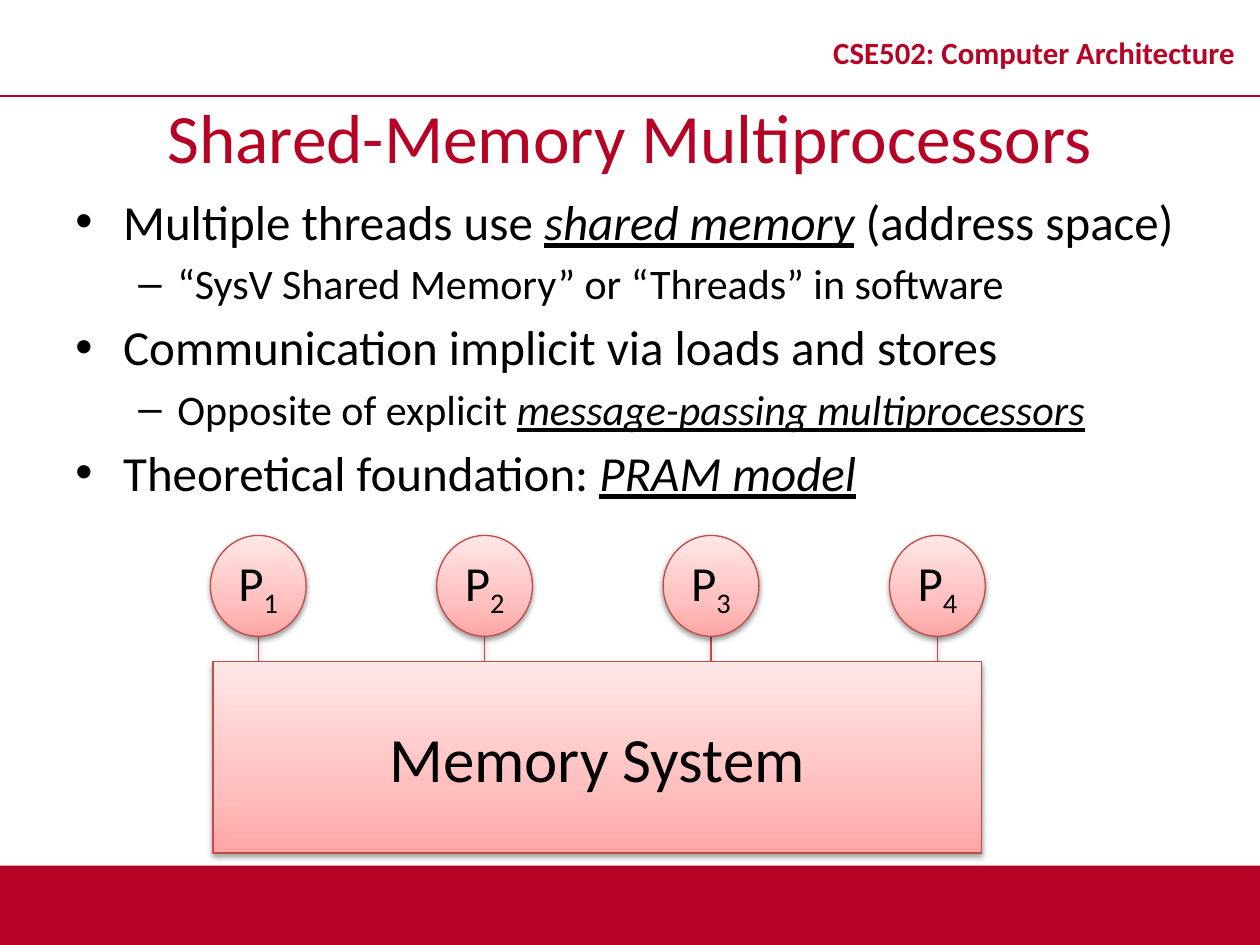
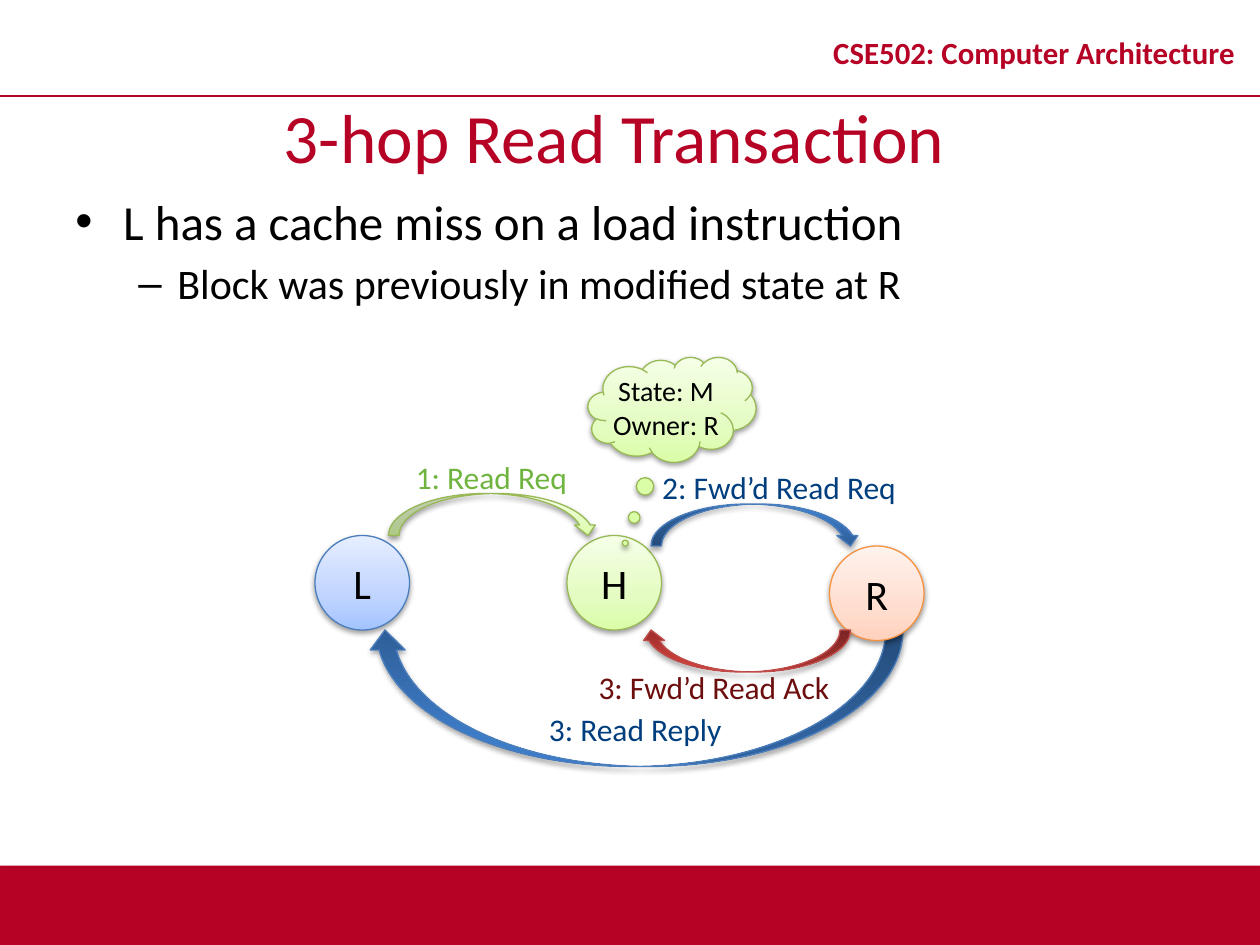
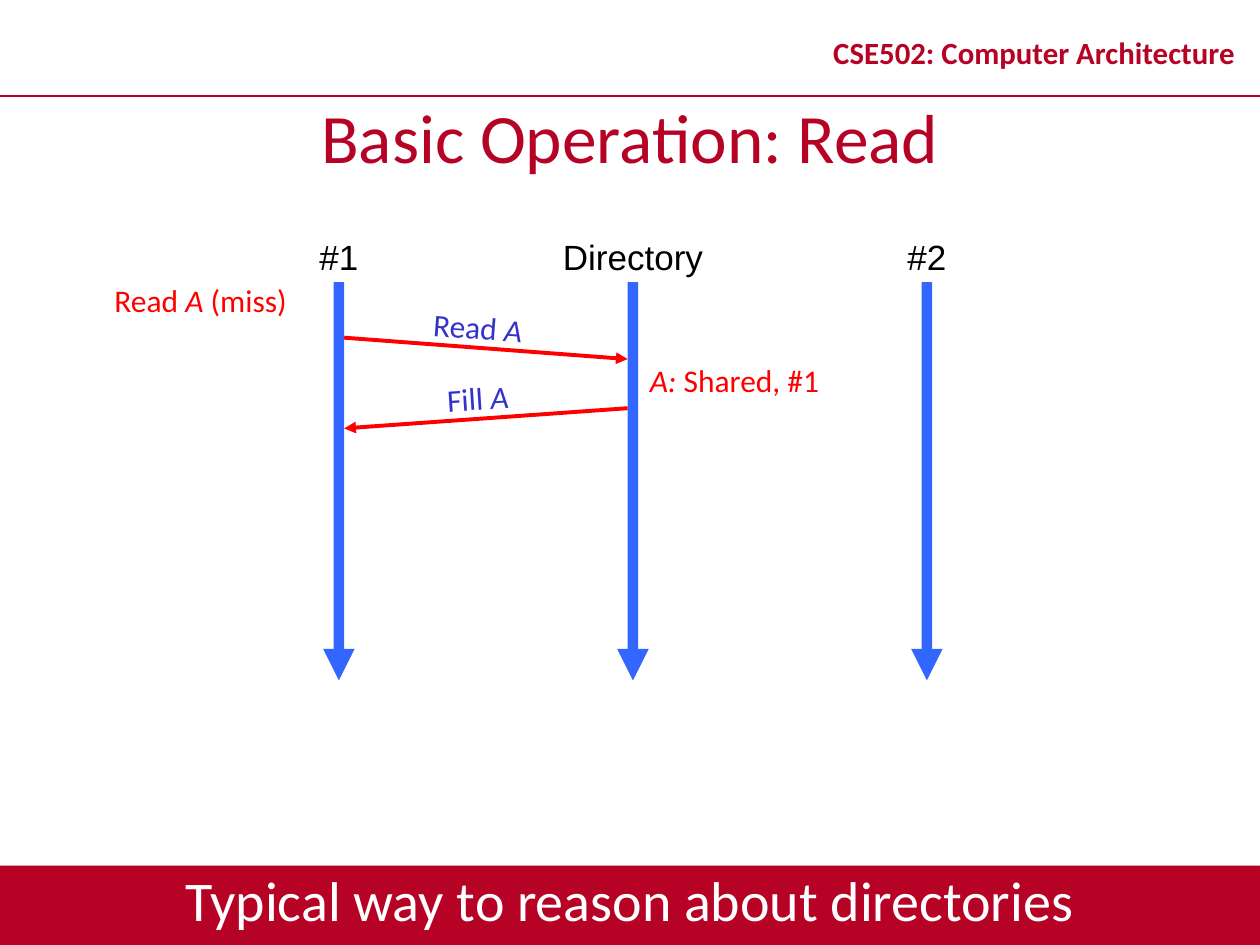
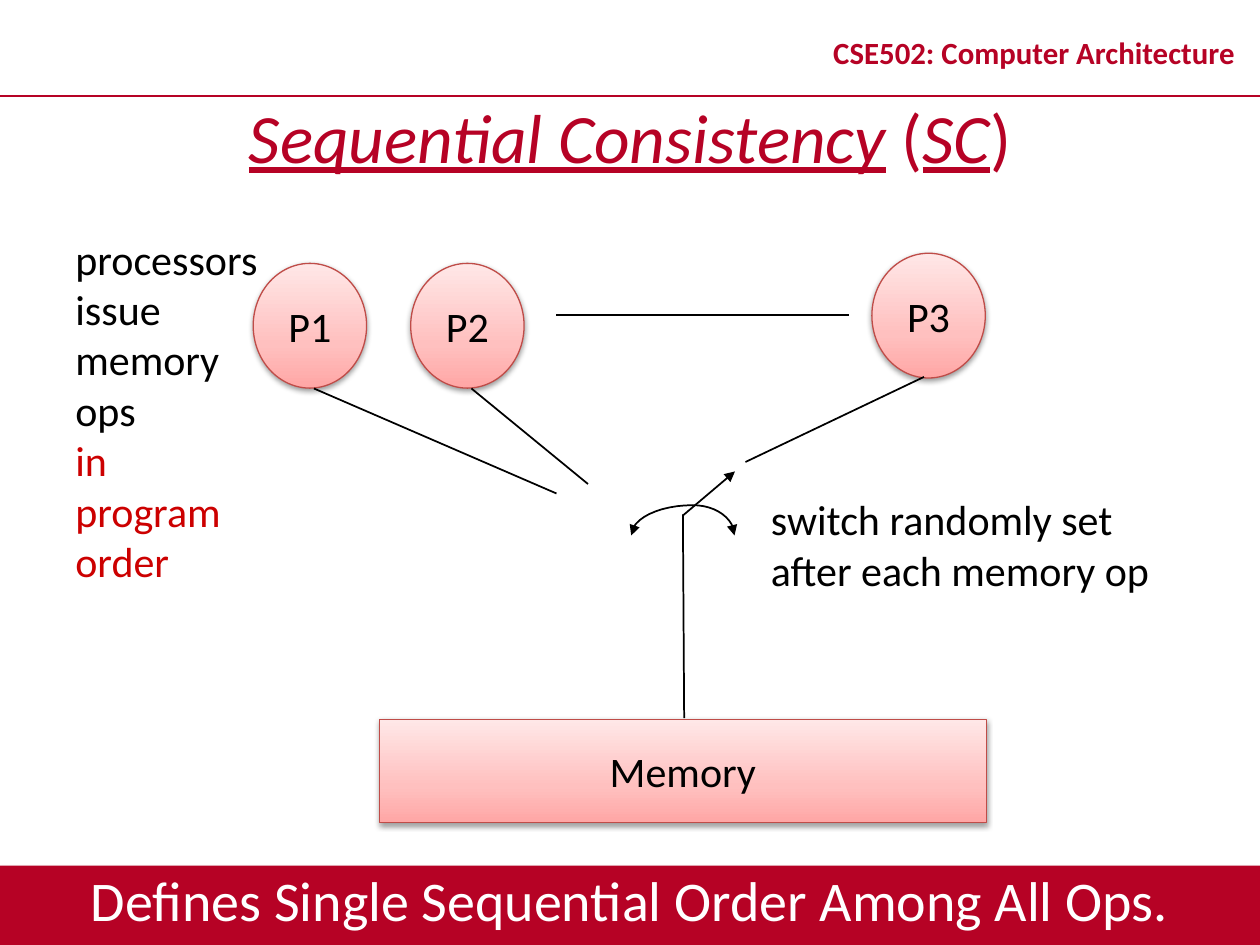
import math
from dataclasses import dataclass, field
from lxml import etree
from pptx import Presentation, util as u
from pptx.dml.color import RGBColor
from pptx.enum import shapes as es, text as et
from pptx.oxml.ns import qn

COLS, ROWS = 120, 90
SHAPE = es.MSO_SHAPE
CENTER, LEFT = et.PP_ALIGN.CENTER, et.PP_ALIGN.LEFT
MIDDLE, TOP = et.MSO_ANCHOR.MIDDLE, et.MSO_ANCHOR.TOP


@dataclass
class Look:
    stops: tuple
    line: str
    shadow: tuple = (38, 1.57)


@dataclass
class Theme:
    font: str = "Calibri"
    label_font: str = "Arial"
    brand: str = "B60225"
    ink: str = "000000"
    paper: str = "FFFFFF"
    alert: str = "FF0000"
    message: str = "3333CC"
    lifeline: str = "3366FF"
    order: str = "CC0000"
    title: float = 39.6
    course: float = 17.6
    memory: float = 36
    takeaway: float = 32
    body: tuple = (28, 24)
    lane: float = 20
    label: float = 18
    cloud: float = 16
    band_shadow: tuple = (35, 1.8)
    looks: dict = field(default_factory=lambda: {
        "pink": Look(((0, "FFA6A5"), (35, "FFC0BF"), (100, "FFE7E7")), "BF4C48"),
        "sky": Look(((0, "A4C4FF"), (35, "BFD4FF"), (100, "E6EEFF")), "4B7EBC"),
        "lime": Look(((0, "DAFDA7"), (35, "E4FCC2"), (100, "F5FFE7")), "98B955"),
        "peach": Look(((0, "FFD2BD"), (35, "FFDED0"), (100, "FFF2ED")), "F69240"),
        "blue": Look(((0, "2F5F99"), (80, "3D7CC7"), (100, "3A7CCB")), "4B7EBC", (35, 1.8)),
        "red": Look(((0, "9C2F2D"), (80, "CB3E3A"), (100, "CE3B37")), "BF4C48", (35, 1.8)),
    })


T = Theme()

COURSE = "CSE502: Computer Architecture"
BULLETS = (("•", 0.38, -0.38), ("–", 0.81, -0.31))

SHARED = {
    "title": ["Shared-Memory Multiprocessors"],
    "points": [
        (0, ["Multiple threads use ", ("shared memory", "iu"), " (address space)"]),
        (1, ["“SysV Shared Memory” or “Threads” in software"]),
        (0, ["Communication implicit via loads and stores"]),
        (1, ["Opposite of explicit ", ("message-passing multiprocessors", "iu")]),
        (0, ["Theoretical foundation: ", ("PRAM model", "iu")]),
    ],
    "processors": 4,
    "memory": "Memory System",
}

HOPS = {
    "title": ["3-hop Read Transaction"],
    "points": [
        (0, ["L has a cache miss on a load instruction"]),
        (1, ["Block was previously in modified state at R"]),
    ],
    "nodes": [("L", 30, 51, "sky"), ("H", 54, 51, "lime"), ("R", 79, 52, "peach")],
    "cloud": "State: M Owner: R",
    "reply": ((35, 60, 51, 13), 180, "blue", (0.127, 0.256, 0.146)),
    "requests": [
        ((37, 47, 20, 4), 0, "lime", ()),
        ((62, 48, 20, 4), 0, "blue", ()),
        ((61, 60, 20, 4), 180, "red", ()),
    ],
    "labels": [
        ("1: Read Req", 46.8, 43, 17, "6EB43F"),
        ("3: Read Reply", 60.5, 67, 19, "003E7E"),
        ("2: Fwd’d Read Req", 74.2, 44, 25, "003E7E"),
        ("3: Fwd’d Read Ack", 68, 63, 24.7, "6C0E0E"),
    ],
}

READ = {
    "title": ["Basic Operation: Read"],
    "lanes": ["#1", "Directory", "#2"],
    "notes": [
        (["Read ", ("A", "i"), " (miss)"], (9.72, 26.16, 24, 4.8)),
        ([("A:", "i"), " Shared, #1"], (60.72, 33.84, 27, 4.8)),
    ],
    "messages": [
        (["Read ", ("A", "i")], (40.08, 29.16, 11.04, 4.44), 4.3, (0, 32.16), (1, 34.2)),
        (["Fill ", ("A", "i")], (41.4, 35.88, 8.28, 4.44), 356.3, (1, 38.88), (0, 40.8)),
    ],
    "takeaway": "Typical way to reason about directories",
}

SEQUENTIAL = {
    "title": [("Sequential Consistency", "iu"), " (", ("SC", "iu"), ")"],
    "issue": [("processors", T.ink), ("issue memory ops", T.ink), ("in program order", T.order)],
    "switch": ["switch randomly set", "after each memory op"],
    "processors": [("P1", 24.12, 25.08), ("P2", 39.12, 25.08), ("P3", 83.04, 24.12)],
    "wires": [
        ((53, 30), (80.9, 30)),
        ((65.16, 68.4), (65.04, 49)),
        ((53, 47), (29.9, 37)),
        ((56, 46.1), (44.9, 37)),
        ((71, 44), (88, 35.9)),
    ],
    "pointer": ((65.04, 49.1), (70, 44.9)),
    "swing": (66, 51, 2.88, (3.96, -5.88)),
    "memory": "Memory",
    "takeaway": "Defines Single Sequential Order Among All Ops.",
}


def cell(n):
    return u.Emu(round(n * 914400 / 12))


def rgb(value):
    return RGBColor.from_string(value)


def sub(parent, tag, **attrs):
    return etree.SubElement(parent, qn(tag), {k: str(v) for k, v in attrs.items()})


def cast_shadow(part, alpha, dist):
    effects = part._element.spPr.find(qn("a:effectLst"))
    if effects is None:
        effects = sub(part._element.spPr, "a:effectLst")
    shade = sub(effects, "a:outerShdw", blurRad=40000, dist=u.Pt(dist), dir=5400000, rotWithShape=0)
    sub(sub(shade, "a:srgbClr", val=T.ink), "a:alpha", val=alpha * 1000)


def write(part, paragraphs, size, color=T.ink, align=CENTER, anchor=MIDDLE, wrap=True,
          font=T.font, bold=False, spacing=None, insets=None):
    frame = part.text_frame
    frame.word_wrap = wrap
    frame.vertical_anchor = anchor
    if insets:
        (frame.margin_left, frame.margin_top,
         frame.margin_right, frame.margin_bottom) = map(u.Inches, insets)
    for i, runs in enumerate(paragraphs):
        para = frame.paragraphs[0] if i == 0 else frame.add_paragraph()
        para.alignment = align
        if spacing:
            para.line_spacing = spacing
        add_runs(para, runs, size, color, font, bold)
    return part


def add_runs(para, runs, size, color=T.ink, font=T.font, bold=False):
    for item in runs:
        words, style = (item, "") if isinstance(item, str) else item
        run = para.add_run()
        run.text = words
        run.font.name, run.font.size = font, u.Pt(size)
        run.font.color.rgb = rgb(color)
        run.font.bold = bold
        run.font.italic = "i" in style
        run.font.underline = "u" in style
        if "_" in style:
            run.font._element.set("baseline", "-25000")


def text_at(slide, box, paragraphs, size, **options):
    area = slide.shapes.add_textbox(*map(cell, box))
    return write(area, paragraphs, size, **options)


def flat(slide, box, color):
    part = slide.shapes.add_shape(SHAPE.RECTANGLE, *map(cell, box))
    part.shadow.inherit = False
    part.fill.solid()
    part.fill.fore_color.rgb = rgb(color)
    part.line.fill.background()
    return part


def glossy(slide, kind, box, look_name, turn=0, adjust=()):
    look = T.looks[look_name]
    part = slide.shapes.add_shape(kind, *map(cell, box))
    part.rotation = turn
    for i, value in enumerate(adjust):
        part.adjustments[i] = value
    part.fill.gradient()
    part.fill.gradient_angle = 90
    stops = part._element.spPr.find(".//" + qn("a:gsLst"))
    stops.clear()
    for place, color in look.stops:
        sub(sub(stops, "a:gs", pos=place * 1000), "a:srgbClr", val=color)
    part.line.color.rgb = rgb(look.line)
    part.line.width = u.Pt(0.75)
    part.shadow.inherit = False
    cast_shadow(part, *look.shadow)
    return part


def stroke(part, color, width, arrow=False):
    part.line.color.rgb = rgb(color)
    part.line.width = u.Pt(width)
    if arrow:
        sub(part.line._get_or_add_ln(), "a:tailEnd", type="triangle")


def wire(slide, start, end, color=T.ink, width=1, arrow=False):
    link = slide.shapes.add_connector(es.MSO_CONNECTOR.STRAIGHT, *map(cell, (*start, *end)))
    stroke(link, color, width, arrow)
    sub(link._element.spPr, "a:effectLst")
    return link


def swing_arrow(slide, cx, cy, rx, ry, steps=12):
    angles = [math.pi / 2 * i / steps for i in range(steps + 1)]
    points = [(cell(cx + rx * math.sin(a)), cell(cy - ry * math.cos(a))) for a in angles]
    outline = slide.shapes.build_freeform(*points[0], scale=1.0)
    outline.add_line_segments(points[1:], close=False)
    arc = outline.convert_to_shape()
    arc.fill.background()
    arc.shadow.inherit = False
    stroke(arc, T.ink, 1, True)


def start_slide(deck, content, title_insets=None):
    slide = deck.slides.add_slide(deck.slide_layouts[6])
    band = flat(slide, (0, 82.44, COLS, ROWS - 82.44), T.brand)
    cast_shadow(band, *T.band_shadow)
    wire(slide, (0, 9.12), (COLS, 9.12), T.brand)
    text_at(slide, (77, 1.56, 43, 7.56), [[COURSE]], T.course, color=T.brand, bold=True, spacing=0.8)
    text_at(slide, (0, 9.12, COLS, 7.56), [content["title"]], T.title, color=T.brand, insets=title_insets)
    if "points" in content:
        add_points(slide, content["points"])
    return slide


def add_points(slide, points):
    frame = slide.shapes.add_textbox(*map(cell, (6, 17.64, 108, 64.2))).text_frame
    frame.word_wrap = True
    for i, (level, runs) in enumerate(points):
        para = frame.paragraphs[0] if i == 0 else frame.add_paragraph()
        mark, margin, indent = BULLETS[level]
        para.level = level
        props = para._p.get_or_add_pPr()
        props.set("marL", str(u.Inches(margin)))
        props.set("indent", str(u.Inches(indent)))
        sub(props, "a:buFont", typeface=T.label_font)
        sub(props, "a:buChar", char=mark)
        if i:
            para.space_before = u.Pt(round(T.body[level] * 0.18, 1))
        add_runs(para, runs, T.body[level])


def add_takeaway(slide, words):
    text_at(slide, (0, 81.84, COLS, 7.56), [[words]], T.takeaway, color=T.paper, anchor=TOP)


def shared_memory(deck):
    slide = start_slide(deck, SHARED)
    for i in range(SHARED["processors"]):
        left = 20.04 + 21.56 * i
        middle = left + 4.56
        bus = wire(slide, (middle, 59.64), (middle, 63.12), T.looks["pink"].line, 0.75)
        cast_shadow(bus, *T.looks["pink"].shadow)
        processor = glossy(slide, SHAPE.OVAL, (left, 51, 9.12, 9.6), "pink")
        write(processor, [["P", (str(i + 1), "_")]], T.body[0], wrap=False)
    memory = glossy(slide, SHAPE.RECTANGLE, (20.28, 63, 73.2, 18.24), "pink")
    write(memory, [[SHARED["memory"]]], T.memory)


def three_hops(deck):
    slide = start_slide(deck, HOPS, (0.1, 0.05, 0.35, 0.05))
    glossy_arrow = lambda box, turn, look, adjust: glossy(
        slide, SHAPE.CURVED_DOWN_ARROW, box, look, turn, adjust)
    glossy_arrow(*HOPS["reply"])
    for name, left, top, look in HOPS["nodes"]:
        node = glossy(slide, SHAPE.OVAL, (left, top, 9, 9), look)
        write(node, [[name]], T.body[1], wrap=False, insets=(0, 0.05, 0, 0.05))
    cloud = glossy(slide, SHAPE.CLOUD_CALLOUT, (56, 34, 16, 10), "lime", adjust=(-0.278, 1.272))
    write(cloud, [[HOPS["cloud"]]], T.cloud, insets=(0, 0, 0, 0))
    for request in HOPS["requests"]:
        glossy_arrow(*request)
    for words, middle, top, width, color in HOPS["labels"]:
        text_at(slide, (middle - width / 2, top, width, 4.8), [[words]], T.label,
                color=color, anchor=TOP, wrap=False)


def basic_read(deck):
    slide = start_slide(deck, READ)
    lane_x = [32.28 + 28 * i for i in range(len(READ["lanes"]))]
    for name, x in zip(READ["lanes"], lane_x):
        text_at(slide, (x - 10.5, 21.84, 21, 5.2), [[name]], T.lane, font=T.label_font, anchor=TOP)
        flat(slide, (x - 0.5, 26.88, 1, 36), T.lifeline)
        wire(slide, (x, 61.8), (x, 64.8), T.lifeline, 6, True)
    for words, box, turn, (sender, y1), (receiver, y2) in READ["messages"]:
        edge = 0.5 if sender < receiver else -0.5
        wire(slide, (lane_x[sender] + edge, y1), (lane_x[receiver] - edge, y2), T.alert, 2.25, True)
        message = text_at(slide, box, [words], T.label, color=T.message, align=LEFT,
                          anchor=TOP, wrap=False, spacing=0.9)
        message.rotation = turn
    for words, box in READ["notes"]:
        text_at(slide, box, [words], T.label, color=T.alert, align=LEFT, anchor=TOP)
    add_takeaway(slide, READ["takeaway"])


def sequential(deck):
    slide = start_slide(deck, SEQUENTIAL)
    text_at(slide, (72.24, 46.44, 38.88, 10.92), [[words] for words in SEQUENTIAL["switch"]],
            T.body[1], align=LEFT, anchor=TOP, wrap=False)
    issue = slide.shapes.add_textbox(*map(cell, (6, 21.6, 19.92, 35.2)))
    issue.text_frame.word_wrap = True
    for i, (words, color) in enumerate(SEQUENTIAL["issue"]):
        para = issue.text_frame.add_paragraph() if i else issue.text_frame.paragraphs[0]
        add_runs(para, [words], T.body[1], color)
    for name, left, top in SEQUENTIAL["processors"]:
        processor = glossy(slide, SHAPE.OVAL, (left, top, 10.8, 11.88), "pink")
        write(processor, [[name]], T.body[1], wrap=False)
    memory = glossy(slide, SHAPE.RECTANGLE, (36.12, 68.52, 57.84, 9.84), "pink")
    write(memory, [[SEQUENTIAL["memory"]]], T.body[1])
    for start, end in SEQUENTIAL["wires"]:
        wire(slide, start, end)
    wire(slide, *SEQUENTIAL["pointer"], arrow=True)
    cx, cy, ry, reaches = SEQUENTIAL["swing"]
    for rx in reaches:
        swing_arrow(slide, cx, cy, rx, ry)
    add_takeaway(slide, SEQUENTIAL["takeaway"])


def main():
    deck = Presentation()
    deck.slide_width, deck.slide_height = cell(COLS), cell(ROWS)
    for build in (shared_memory, three_hops, basic_read, sequential):
        build(deck)
    deck.save("out.pptx")


if __name__ == "__main__":
    main()
